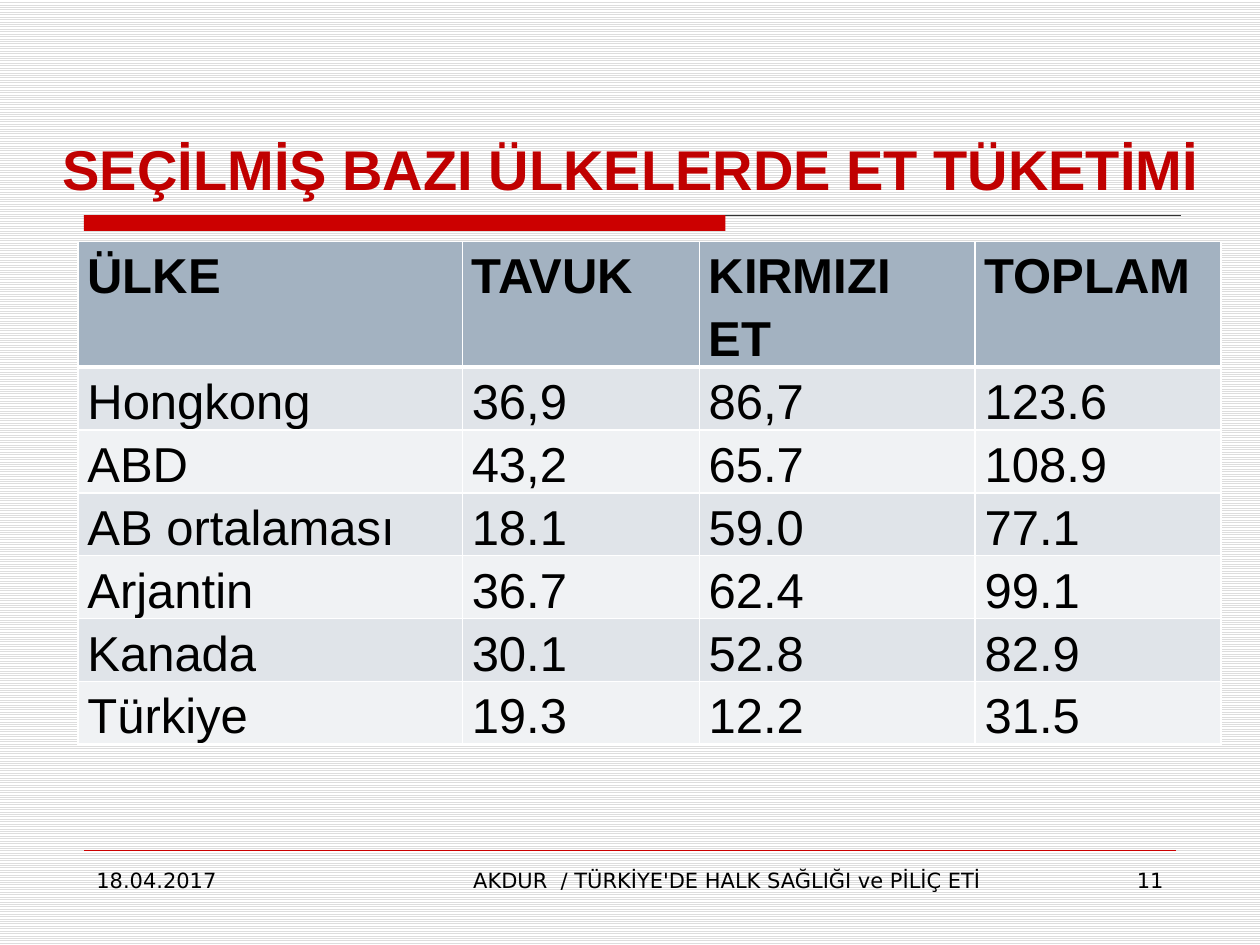
"""Build a slide comparing meat consumption in selected countries."""
from lxml import etree
from pptx import Presentation
from pptx.dml.color import RGBColor
from pptx.enum.dml import MSO_PATTERN
from pptx.enum.shapes import MSO_CONNECTOR, MSO_SHAPE
from pptx.enum.text import MSO_ANCHOR, PP_ALIGN
from pptx.oxml.ns import qn
from pptx.util import Pt

STRIPES = MSO_PATTERN.LIGHT_HORIZONTAL
STRAIGHT, RECTANGLE = MSO_CONNECTOR.STRAIGHT, MSO_SHAPE.RECTANGLE
BOTTOM, TOP = MSO_ANCHOR.BOTTOM, MSO_ANCHOR.TOP
LEFT, CENTER, RIGHT, JUSTIFY = (
    PP_ALIGN.LEFT, PP_ALIGN.CENTER, PP_ALIGN.RIGHT, PP_ALIGN.JUSTIFY)

WHITE = RGBColor(0xFF, 0xFF, 0xFF)
BLACK = RGBColor(0, 0, 0)
STRIPE_GREY = RGBColor(0xDD, 0xDD, 0xDD)
RULE_GREY = RGBColor(0x33, 0x33, 0x33)
RED = RGBColor(0xCC, 0, 0)
TITLE_RED = RGBColor(0xC0, 0, 0)
HEADER_BLUE = RGBColor(0xA3, 0xB2, 0xC1)
ROW_TINTS = (RGBColor(0xE0, 0xE4, 0xE9), RGBColor(0xF0, 0xF2, 0xF4))

SANS = "DejaVu Sans"
COLUMN_WIDTHS = (219.6, 135.4, 157.7, 140.4)
ROW_HEIGHT = 29.5
CONSUMPTION = (
    ("ÜLKE", "TAVUK", "KIRMIZI ET", "TOPLAM"),
    ("Hongkong", "36,9", "86,7", "123.6"),
    ("ABD", "43,2", "65.7", "108.9"),
    ("AB ortalaması", "18.1", "59.0", "77.1"),
    ("Arjantin", "36.7", "62.4", "99.1"),
    ("Kanada", "30.1", "52.8", "82.9"),
    ("Türkiye", "19.3", "12.2", "31.5"),
)
FOOTERS = (
    ("18.04.2017", 48, 156, LEFT),
    ("AKDUR  / TÜRKİYE'DE HALK SAĞLIĞI ve PİLİÇ ETİ", 246, 339, CENTER),
    ("11", 516, 156, RIGHT),
)


def set_all(target, values):
    for name, value in values.items():
        setattr(target, name, value)


def add_run(paragraph, text, size, font, color, bold=False):
    run = paragraph.add_run()
    run.text = text
    set_all(run.font, {"size": Pt(size), "name": font, "bold": bold})
    run.font.color.rgb = color


def add_title(slide):
    title = slide.shapes.title
    set_all(title, {"left": Pt(16.5), "top": Pt(24),
                    "width": Pt(680.5), "height": Pt(96)})
    set_all(title.text_frame, {"vertical_anchor": BOTTOM, "word_wrap": True})
    heading = title.text_frame.paragraphs[0]
    heading.alignment = LEFT
    add_run(heading, " ", 38, SANS, TITLE_RED)
    add_run(heading, "SEÇİLMİŞ BAZI ÜLKELERDE ET TÜKETİMİ",
            32, "Arial", TITLE_RED, True)


def add_rule(slide, left, right, y, color, weight):
    rule = slide.shapes.add_connector(
        STRAIGHT, Pt(left), Pt(y), Pt(right), Pt(y))
    rule.line.color.rgb = color
    rule.line.width = Pt(weight)
    etree.SubElement(rule._element.spPr, qn("a:effectLst"))


def add_title_bar(slide):
    bar = slide.shapes.add_shape(
        RECTANGLE, Pt(48), Pt(123), Pt(366.5), Pt(9))
    bar.shadow.inherit = False
    bar.fill.solid()
    bar.fill.fore_color.rgb = RED
    bar.line.fill.background()


def add_borders(cell, bottom_weight):
    properties = cell._tc.get_or_add_tcPr()
    for side, weight in zip("LRTB", (1, 1, 1, bottom_weight)):
        border = etree.SubElement(
            properties, qn(f"a:ln{side}"), w=str(Pt(weight)))
        fill = etree.SubElement(border, qn("a:solidFill"))
        etree.SubElement(fill, qn("a:srgbClr"), val=str(WHITE))


def format_cell(cell, text, fill, alignment, is_header):
    set_all(cell, {"margin_left": Pt(5.4), "margin_right": Pt(5.4),
                   "margin_top": 0, "margin_bottom": 0,
                   "vertical_anchor": TOP})
    add_borders(cell, 3 if is_header else 1)
    cell.fill.solid()
    cell.fill.fore_color.rgb = fill
    paragraph = cell.text_frame.paragraphs[0]
    set_all(paragraph, {"alignment": alignment, "line_spacing": 1.15})
    add_run(paragraph, text, 28, "Arial", BLACK, is_header)


def add_consumption_table(slide):
    row_count = len(CONSUMPTION)
    table = slide.shapes.add_table(
        row_count, len(COLUMN_WIDTHS), Pt(44.6), Pt(138),
        Pt(sum(COLUMN_WIDTHS)), Pt(ROW_HEIGHT * row_count)).table
    for column, width in zip(table.columns, COLUMN_WIDTHS):
        column.width = Pt(width)
    for r, values in enumerate(CONSUMPTION):
        is_header = r == 0
        fill = HEADER_BLUE if is_header else ROW_TINTS[(r - 1) % 2]
        for c, text in enumerate(values):
            alignment = JUSTIFY if is_header or c == 0 else LEFT
            format_cell(table.cell(r, c), text, fill, alignment, is_header)


def add_footer(slide, text, left, width, alignment):
    footer = slide.shapes.add_textbox(
        Pt(left), Pt(492), Pt(width), Pt(37.5))
    footer.text_frame.word_wrap = True
    paragraph = footer.text_frame.paragraphs[0]
    paragraph.alignment = alignment
    add_run(paragraph, text, 12, SANS, BLACK)


def main():
    deck = Presentation()
    set_all(deck, {"slide_width": Pt(720), "slide_height": Pt(540)})
    slide = deck.slides.add_slide(deck.slide_layouts[5])
    background = slide.background.fill
    background.patterned()
    background.pattern = STRIPES
    background.fore_color.rgb = STRIPE_GREY
    background.back_color.rgb = WHITE
    add_rule(slide, 48, 674.6, 123, RULE_GREY, 0.75)
    add_title_bar(slide)
    add_rule(slide, 48, 672, 486, RED, 0.25)
    add_title(slide)
    add_consumption_table(slide)
    for footer in FOOTERS:
        add_footer(slide, *footer)
    deck.save("out.pptx")


if __name__ == "__main__":
    main()
